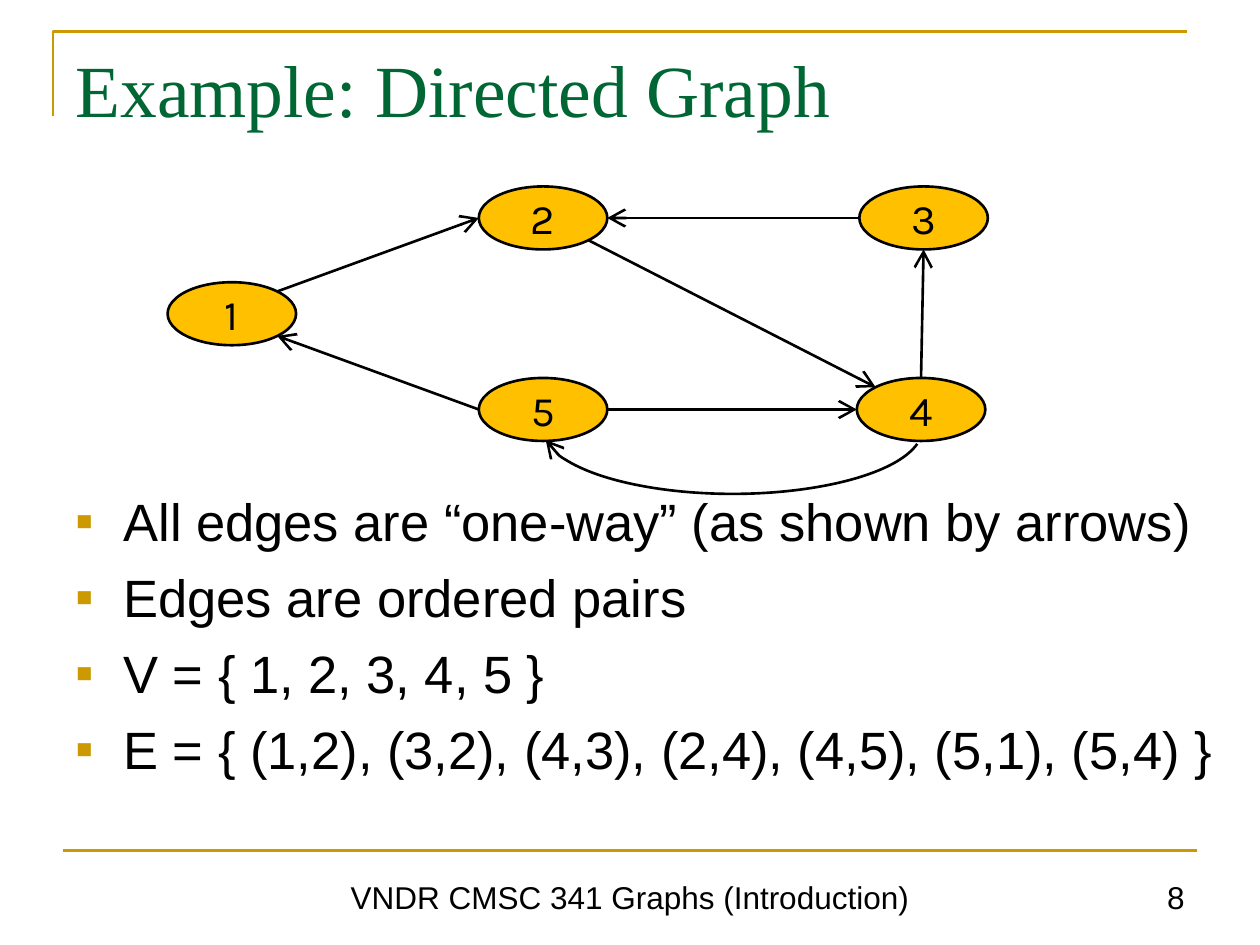
"""Build a slide showing a directed graph with its vertex and edge sets."""
from dataclasses import dataclass
from math import sqrt

from lxml import etree
from pptx import Presentation
from pptx.dml.color import RGBColor
from pptx.enum.shapes import MSO_CONNECTOR, MSO_SHAPE
from pptx.enum.text import MSO_ANCHOR, MSO_AUTO_SIZE, PP_ALIGN
from pptx.oxml.ns import qn
from pptx.util import Inches, Pt

GOLD = RGBColor(0xCC, 0x99, 0x00)
AMBER = RGBColor(0xFF, 0xC0, 0x00)
GREEN = RGBColor(0x00, 0x66, 0x33)
BLACK = RGBColor(0x00, 0x00, 0x00)

LEFT, CENTER, RIGHT = PP_ALIGN.LEFT, PP_ALIGN.CENTER, PP_ALIGN.RIGHT
TOP, MIDDLE, BOTTOM = MSO_ANCHOR.TOP, MSO_ANCHOR.MIDDLE, MSO_ANCHOR.BOTTOM
NO_FIT = MSO_AUTO_SIZE.NONE
ELLIPSE, ARC = MSO_SHAPE.OVAL, MSO_SHAPE.ARC
STRAIGHT = MSO_CONNECTOR.STRAIGHT

SLIDE_WIDTH, SLIDE_HEIGHT = Inches(10), Inches(7.5)
CELL = SLIDE_WIDTH / 10
NODE_WIDTH, NODE_HEIGHT = 1.02, 0.5
DIAGONAL = sqrt(0.5)
SITES = {
    "top": (0, -1), "bottom": (0, 1), "left": (-1, 0), "right": (1, 0),
    "top left": (-DIAGONAL, -DIAGONAL), "top right": (DIAGONAL, -DIAGONAL),
    "bottom right": (DIAGONAL, DIAGONAL),
}


@dataclass(frozen=True)
class Node:
    """A vertex placed by the column and row of its top left corner."""
    label: str
    column: float
    row: float

    def site(self, side: str) -> tuple[float, float]:
        """Return the point on the outline at the given side."""
        x, y = SITES[side]
        return (self.column + NODE_WIDTH * (1 + x) / 2,
                self.row + NODE_HEIGHT * (1 + y) / 2)


@dataclass(frozen=True)
class Edge:
    """A one-way edge between sides of two vertices."""
    source: int
    source_side: str
    target: int
    target_side: str


NODES = {
    4: Node("4", 6.8, 3), 5: Node("5", 3.8, 3), 3: Node("3", 6.82, 1.48),
    2: Node("2", 3.8, 1.48), 1: Node("1", 1.33, 2.24),
}
EDGES = [
    Edge(4, "top", 3, "bottom"), Edge(5, "right", 4, "left"),
    Edge(1, "top right", 2, "left"), Edge(3, "left", 2, "right"),
    Edge(5, "left", 1, "bottom right"), Edge(2, "bottom right", 4, "top left"),
]
FACTS = [
    "All edges are “one-way” (as shown by arrows)",
    "Edges are ordered pairs",
    "V = { 1, 2, 3, 4, 5 }",
    "E = { (1,2), (3,2), (4,3), (2,4), (4,5), (5,1), (5,4) }",
]


def cells(*counts: float) -> list[int]:
    """Turn grid counts into lengths."""
    return [round(count * CELL) for count in counts]


def apply(target, formats: dict) -> None:
    """Set every attribute named in a dict of format values."""
    for attribute, value in formats.items():
        setattr(target, attribute, value)


def write(shape, lines: list[str], size: float, font: str, color: RGBColor,
          align, frame_formats: dict, paragraph_formats: dict) -> None:
    """Fill a shape with formatted paragraphs."""
    frame = shape.text_frame
    frame.text = "\n".join(lines)
    apply(frame, {"auto_size": NO_FIT, "word_wrap": True} | frame_formats)
    for paragraph in frame.paragraphs:
        apply(paragraph, {"alignment": align} | paragraph_formats)
        apply(paragraph.runs[0].font, {"size": Pt(size), "name": font})
        paragraph.runs[0].font.color.rgb = color


def place(shape, column: float, row: float, width: float, height: float) -> None:
    """Move and size a shape on the grid."""
    apply(shape, dict(zip(("left", "top", "width", "height"),
                          cells(column, row, width, height))))


def stroke(shape, color: RGBColor, arrow: bool = False) -> None:
    """Outline a shape, with an open arrowhead at its end if asked."""
    shape.line.color.rgb = color
    shape.line.width = Pt(1.5)
    if arrow:
        etree.SubElement(shape.line._get_or_add_ln(), qn("a:tailEnd"),
                         type="arrow", w="lg", len="lg")


def add_line(slide, start: tuple, end: tuple, color: RGBColor, arrow: bool) -> None:
    """Draw a straight line between two grid points."""
    line = slide.shapes.add_connector(STRAIGHT, *cells(*start, *end))
    stroke(line, color, arrow)
    etree.SubElement(line._element.spPr, qn("a:effectLst"))


def add_frame(slide) -> None:
    """Draw the corner rule above the title and the rule above the footer."""
    builder = slide.shapes.build_freeform(*cells(0.42, 0.92))
    builder.add_line_segments([cells(0.42, 0.25), cells(9.42, 0.25)], close=False)
    corner = builder.convert_to_shape()
    corner.fill.background()
    corner.shadow.inherit = False
    stroke(corner, GOLD)
    add_line(slide, (0.5, 6.75), (9.5, 6.75), GOLD, False)


def add_bullet(paragraph) -> None:
    """Give a paragraph a gold square bullet with a hanging indent."""
    properties = paragraph._p.get_or_add_pPr()
    properties.set("marL", str(Inches(0.38)))
    properties.set("indent", str(-Inches(0.38)))
    bullet_color = etree.SubElement(properties, qn("a:buClr"))
    etree.SubElement(bullet_color, qn("a:srgbClr"), val=str(GOLD))
    etree.SubElement(properties, qn("a:buFont"), typeface="Arial")
    etree.SubElement(properties, qn("a:buChar"), char="▪")


def add_footer(slide, text: str, column: float, width: float, align) -> None:
    """Write one footer entry."""
    footer = slide.shapes.add_textbox(*cells(column, 6.83, width, 0.49))
    write(footer, [text], 18, "Arial", BLACK, align, {"vertical_anchor": BOTTOM}, {})


def add_node(slide, node: Node) -> None:
    """Draw a labelled vertex."""
    oval = slide.shapes.add_shape(
        ELLIPSE, *cells(node.column, node.row, NODE_WIDTH, NODE_HEIGHT))
    oval.fill.solid()
    oval.fill.fore_color.rgb = AMBER
    oval.shadow.inherit = False
    stroke(oval, BLACK)
    write(oval, [node.label], 24, "Karla", BLACK, CENTER,
          {"vertical_anchor": MIDDLE, "word_wrap": False}, {})


def add_curved_edge(slide) -> None:
    """Draw the curved edge from vertex 4 back to vertex 5."""
    curve = slide.shapes.add_shape(ARC, *cells(4.31, 2.89, 3.01, 1.03))
    curve.adjustments[0], curve.adjustments[1] = 2.76, 105.97
    curve.fill.background()
    curve.shadow.inherit = False
    stroke(curve, BLACK, True)


def main() -> None:
    """Build and save the slide."""
    deck = Presentation()
    apply(deck, {"slide_width": SLIDE_WIDTH, "slide_height": SLIDE_HEIGHT})
    slide = deck.slides.add_slide(deck.slide_layouts[1])
    title, body = slide.placeholders
    add_frame(slide)
    place(title, 0.5, 0.3, 8.99, 1.11)
    write(title, ["Example: Directed Graph"], 42, "Times New Roman", GREEN, LEFT,
          {"vertical_anchor": TOP, "margin_top": Inches(0.05)}, {})
    place(body, 0.5, 3.83, 9.25, 2.87)
    write(body, FACTS, 30, "Arial", BLACK, LEFT, {"vertical_anchor": TOP},
          {"space_before": Pt(7.5), "line_spacing": Pt(36)})
    for paragraph in body.text_frame.paragraphs:
        add_bullet(paragraph)
    add_footer(slide, "VNDR CMSC 341 Graphs (Introduction)", 1.75, 6.5, CENTER)
    add_footer(slide, "8", 7.17, 2.33, RIGHT)
    for node in NODES.values():
        add_node(slide, node)
    for edge in EDGES:
        add_line(slide, NODES[edge.source].site(edge.source_side),
                 NODES[edge.target].site(edge.target_side), BLACK, True)
    add_curved_edge(slide)
    deck.save("out.pptx")


if __name__ == "__main__":
    main()
